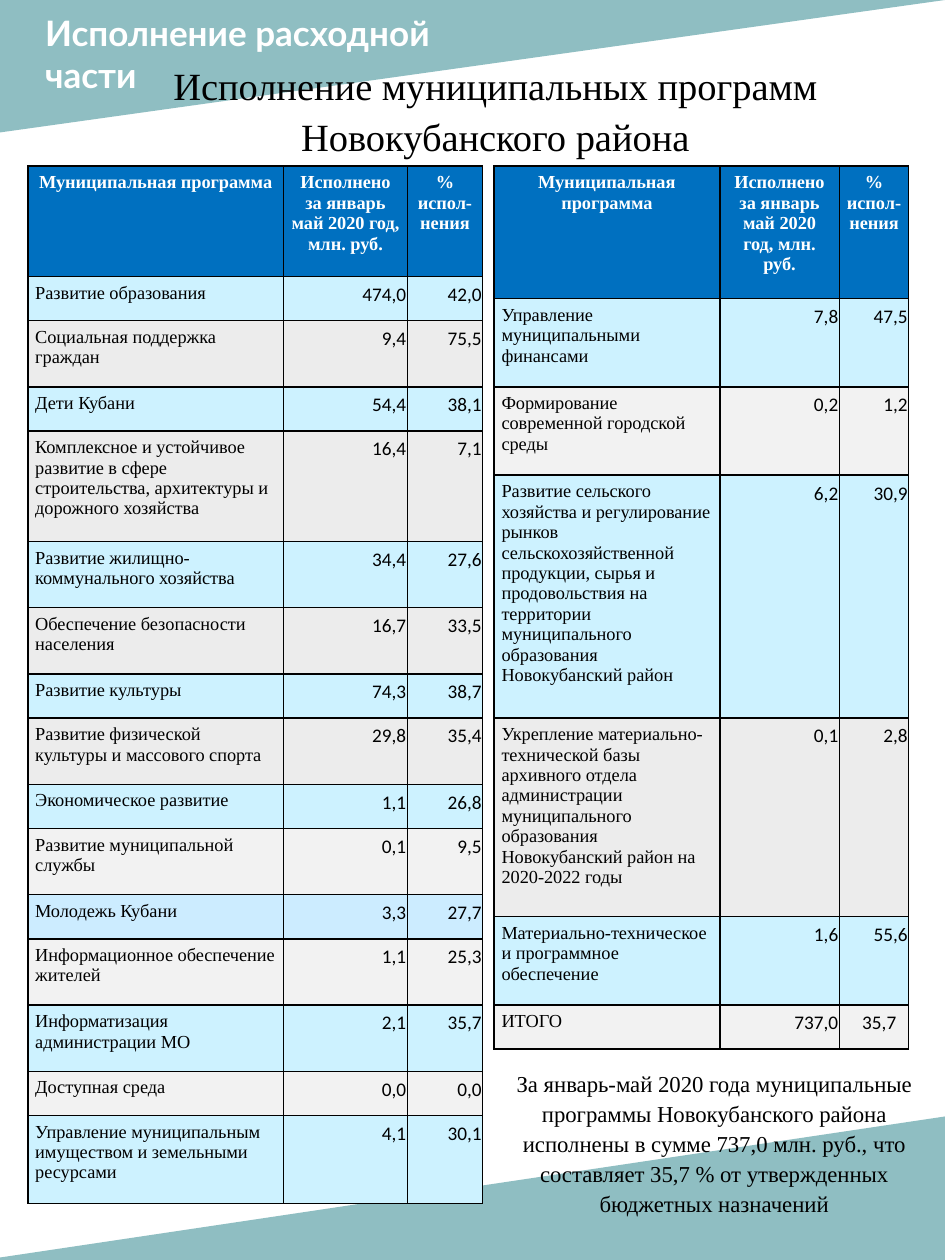
"""Build the slide on the execution of municipal programmes, with two tables and a summary."""
from lxml.etree import SubElement
from pptx import Presentation
from pptx.dml.color import RGBColor
from pptx.enum.shapes import MSO_SHAPE
from pptx.enum.text import MSO_ANCHOR, MSO_AUTO_SIZE, PP_ALIGN as ALIGN
from pptx.oxml.ns import qn
from pptx.util import Cm, Pt

BLACK = RGBColor(0x00, 0x00, 0x00)
WHITE = RGBColor(0xFF, 0xFF, 0xFF)
TEAL = RGBColor(0x51, 0x9A, 0xA0)
HEADER_BLUE = RGBColor(0x00, 0x70, 0xC0)
SKY = RGBColor(0xCD, 0xF2, 0xFF)
PALE_BLUE = RGBColor(0xCC, 0xEC, 0xFF)
GREY = RGBColor(0xEC, 0xEC, 0xEC)
LIGHT_GREY = RGBColor(0xF2, 0xF2, 0xF2)

SERIF = "Times New Roman"
HEADER_FONT = {"name": SERIF, "size": Pt(10.5), "bold": True}
NAME_FONT = {"name": SERIF, "size": Pt(10.5), "bold": False}
VALUE_FONT = {"name": "Calibri", "size": Pt(11), "bold": False}
HALF_LINE_STEP = Cm(0.89)


def write_text(frame, text, font, color, alignment, line_spacing=None):
    frame.word_wrap = True
    frame.text = text
    for paragraph in frame.paragraphs:
        paragraph.alignment = alignment
        paragraph.line_spacing = line_spacing
        for run in paragraph.runs:
            for attribute, value in font.items():
                setattr(run.font, attribute, value)
            run.font.color.rgb = color


def style_cell(cell, fill, side_margin):
    cell.margin_left = cell.margin_right = side_margin
    properties = cell._tc.get_or_add_tcPr()
    for side in ("lnL", "lnR", "lnT", "lnB"):
        border = SubElement(properties, qn(f"a:{side}"), w=str(Pt(0.96)))
        solid = SubElement(border, qn("a:solidFill"))
        SubElement(solid, qn("a:srgbClr"), val=str(BLACK))
    cell.fill.solid()
    cell.fill.fore_color.rgb = fill


presentation = Presentation()
presentation.slide_width = Cm(19.05)
presentation.slide_height = Cm(25.4)
slide = presentation.slides.add_slide(presentation.slide_layouts[5])
title = slide.shapes.title

triangles = [
    ((0, 0, 19.05, 2.67), "flipH"),
    ((-0.33, 22.5, 19.43, 2.9), "flipV"),
]
for box, flip in triangles:
    triangle = slide.shapes.add_shape(MSO_SHAPE.RIGHT_TRIANGLE, *map(Cm, box))
    triangle.rotation = 180
    triangle.element.spPr.xfrm.set(flip, "1")
    triangle.shadow.inherit = False
    triangle.line.fill.background()
    triangle.fill.solid()
    triangle.fill.fore_color.rgb = TEAL
    color_element = triangle.element.spPr.find(f"{qn('a:solidFill')}/{qn('a:srgbClr')}")
    SubElement(color_element, qn("a:alpha"), val="64000")

section = slide.shapes.add_textbox(Cm(0.66), Cm(0.1), Cm(12.37), Cm(1.96))
write_text(section.text_frame, "Исполнение расходной\nчасти",
           {"name": "Lato", "size": Pt(20), "bold": True}, WHITE, ALIGN.LEFT)

section.element.addnext(title.element)
title_place = {"left": Cm(1.63), "top": Cm(1.04), "width": Cm(16.71), "height": Cm(2.11)}
for attribute, value in title_place.items():
    setattr(title, attribute, value)
title.text_frame.vertical_anchor = MSO_ANCHOR.TOP
title.text_frame.auto_size = MSO_AUTO_SIZE.NONE
write_text(title.text_frame, "Исполнение муниципальных программ Новокубанского района",
           {"name": SERIF, "size": Pt(22)}, BLACK, ALIGN.CENTER, 1.1)

header = ("Муниципальная программа", "Исполнено за январь май 2020 год, млн. руб.",
          "% испол-нения")
left_rows = [
    (4, HEADER_BLUE, *header),
    (1, SKY, "Развитие образования", "474,0", "42,0"),
    (2, GREY, "Социальная поддержка граждан", "9,4", "75,5"),
    (1, SKY, "Дети Кубани", "54,4", "38,1"),
    (4, GREY, "Комплексное и устойчивое развитие в сфере строительства, архитектуры "
     "и дорожного хозяйства", "16,4", "7,1"),
    (2, SKY, "Развитие жилищно-коммунального хозяйства", "34,4", "27,6"),
    (2, GREY, "Обеспечение безопасности населения", "16,7", "33,5"),
    (1, SKY, "Развитие культуры", "74,3", "38,7"),
    (2, GREY, "Развитие физической культуры и массового спорта", "29,8", "35,4"),
    (1, SKY, "Экономическое развитие", "1,1", "26,8"),
    (2, LIGHT_GREY, "Развитие муниципальной службы", "0,1", "9,5"),
    (1, PALE_BLUE, "Молодежь Кубани", "3,3", "27,7"),
    (2, LIGHT_GREY, "Информационное обеспечение жителей", "1,1", "25,3"),
    (2, SKY, "Информатизация администрации МО", "2,1", "35,7"),
    (1, LIGHT_GREY, "Доступная среда", "0,0", "0,0"),
    (3, SKY, "Управление муниципальным имуществом и земельными ресурсами", "4,1", "30,1"),
]
right_rows = [
    (5, HEADER_BLUE, *header),
    (3, SKY, "Управление муниципальными финансами", "7,8", "47,5"),
    (3, LIGHT_GREY, "Формирование современной городской среды", "0,2", "1,2"),
    (10, SKY, "Развитие сельского хозяйства и регулирование рынков сельскохозяйственной "
     "продукции, сырья и продовольствия на территории муниципального образования "
     "Новокубанский район", "6,2", "30,9"),
    (8, GREY, "Укрепление материально-технической базы архивного отдела администрации "
     "муниципального образования Новокубанский район на 2020-2022 годы", "0,1", "2,8"),
    (3, SKY, "Материально-техническое и программное обеспечение", "1,6", "55,6"),
    (1, LIGHT_GREY, "ИТОГО", "737,0", "35,7"),
]
tables = [
    (0.56, (5.16, 2.49, 1.52), left_rows),
    (9.96, (4.55, 2.41, 1.4), right_rows),
]
for left, widths, rows in tables:
    heights = [HALF_LINE_STEP * (row[0] + 1) // 2 for row in rows]
    table = slide.shapes.add_table(len(rows), len(widths), Cm(left), Cm(3.35),
                                   Cm(sum(widths)), sum(heights)).table
    for column, width in zip(table.columns, widths):
        column.width = Cm(width)
    for row_index, (line_count, fill, *texts) in enumerate(rows):
        table.rows[row_index].height = heights[row_index]
        for column_index, text in enumerate(texts):
            if row_index == 0:
                font, color, alignment, margin = HEADER_FONT, WHITE, ALIGN.CENTER, Cm(0.15)
            elif column_index == 0:
                font, color, alignment, margin = NAME_FONT, BLACK, ALIGN.LEFT, Cm(0.15)
            else:
                font, color, alignment, margin = VALUE_FONT, BLACK, ALIGN.RIGHT, Cm(0.02)
            cell = table.cell(row_index, column_index)
            style_cell(cell, fill, margin)
            write_text(cell.text_frame, text, font, color, alignment)
table.cell(len(right_rows) - 1, 2).margin_right = Cm(0.25)

summary = slide.shapes.add_textbox(Cm(9.63), Cm(21.39), Cm(9.53), Cm(3))
write_text(summary.text_frame,
           "За январь-май 2020 года муниципальные программы Новокубанского района исполнены "
           "в сумме 737,0 млн. руб., что составляет 35,7 % от утвержденных бюджетных назначений",
           {"name": SERIF, "size": Pt(13)}, BLACK, ALIGN.CENTER, 1.1)

presentation.save("out.pptx")
